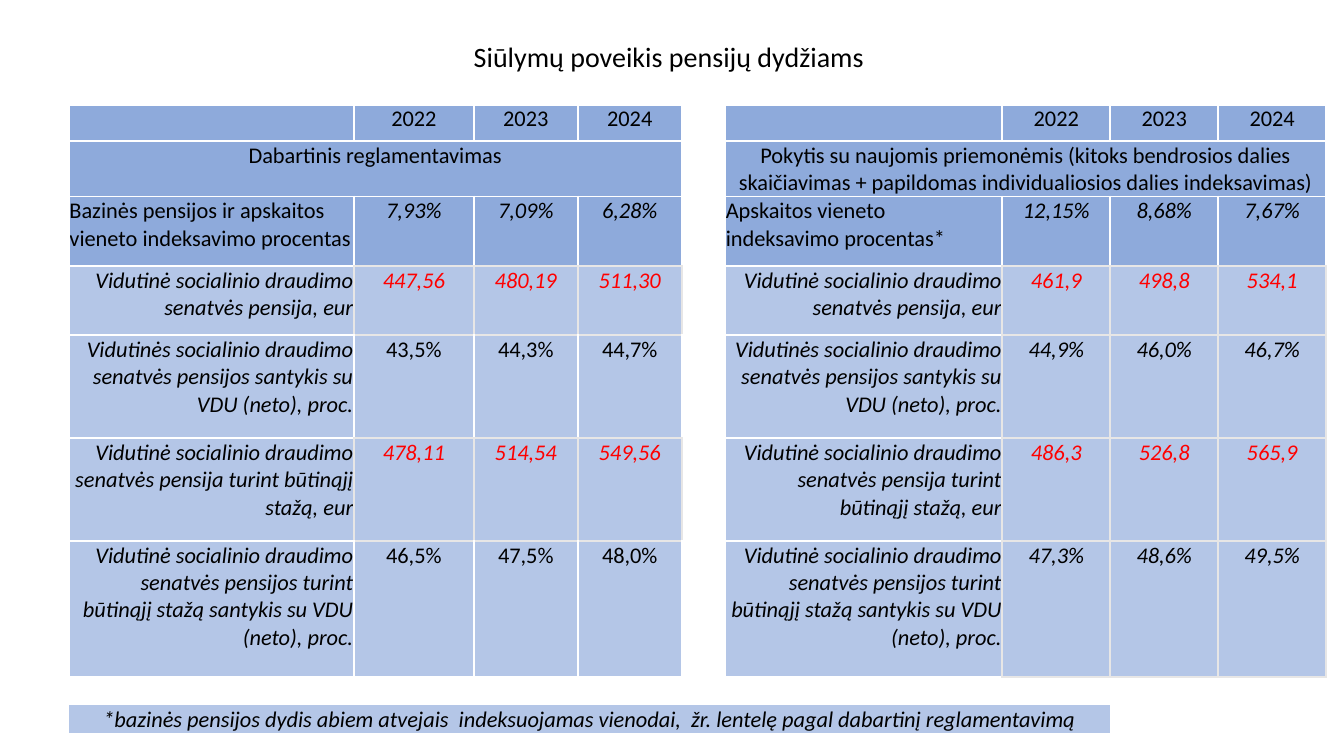
from lxml import etree
from pptx import Presentation
from pptx.dml.color import RGBColor
from pptx.enum.text import MSO_ANCHOR, PP_ALIGN
from pptx.oxml.ns import qn
from pptx.util import Cm, Pt

LEFT, CENTER, RIGHT = PP_ALIGN.LEFT, PP_ALIGN.CENTER, PP_ALIGN.RIGHT
MIDDLE = MSO_ANCHOR.MIDDLE
FONT = "Calibri"
BODY_SIZE = 16
PLAIN_TABLE_STYLE = "{2D5ABB26-0587-4C30-8999-92F81FD0307C}"
COLORS = {
    "text": "000000",
    "euro": "FF0000",
    "header": "8EAADB",
    "body": "B4C6E7",
    "white": "FFFFFF",
    "grey": "E7E6E6",
}

# Table layout in centimetres
COLUMN_WIDTHS = [7.19, 3.02, 2.62, 2.62, 1.09, 6.99, 2.72, 2.72, 2.72]
ROW_HEIGHTS = [0.91, 1.35, 1.75, 1.75, 2.59, 2.59, 3.43, 0.71, 0.69]
PANEL_STARTS = (0, 5)
GAP_COLUMN = 4
EURO_ROWS = (3, 5)
FIRST_BODY_ROW, LAST_BODY_ROW, FOOTNOTE_ROW = 3, 6, 8
SIDES = {"L": (0, -1), "R": (0, 1), "T": (-1, 0), "B": (1, 0)}

# Wording and values
YEARS = ["2022", "2023", "2024"]
MEASURES = [
    "Vidutinė socialinio draudimo senatvės pensija, eur",
    "Vidutinės socialinio draudimo senatvės pensijos santykis su VDU (neto), proc.",
    "Vidutinė socialinio draudimo senatvės pensija turint būtinąjį stažą, eur",
    "Vidutinė socialinio draudimo senatvės pensijos turint būtinąjį stažą santykis su VDU (neto), proc.",
]
PANELS = [
    {
        "heading": "Dabartinis reglamentavimas",
        "index_label": "Bazinės pensijos ir apskaitos vieneto indeksavimo procentas",
        "values": [
            ["7,93%", "7,09%", "6,28%"],
            ["447,56", "480,19", "511,30"],
            ["43,5%", "44,3%", "44,7%"],
            ["478,11", "514,54", "549,56"],
            ["46,5%", "47,5%", "48,0%"],
        ],
    },
    {
        "heading": "Pokytis su naujomis priemonėmis (kitoks bendrosios dalies "
                   "skaičiavimas + papildomas individualiosios dalies indeksavimas)",
        "index_label": "Apskaitos vieneto indeksavimo procentas*",
        "values": [
            ["12,15%", "8,68%", "7,67%"],
            ["461,9", "498,8", "534,1"],
            ["44,9%", "46,0%", "46,7%"],
            ["486,3", "526,8", "565,9"],
            ["47,3%", "48,6%", "49,5%"],
        ],
    },
]
FOOTNOTE = ("*bazinės pensijos dydis abiem atvejais  indeksuojamas vienodai,  "
            "žr. lentelę pagal dabartinį reglamentavimą")


def format_text(frame, size, align=CENTER, color="text", italic=False):
    frame.vertical_anchor = MIDDLE
    for para in frame.paragraphs:
        para.alignment = align
        for span in para.runs:
            span.font.name = FONT
            span.font.size = Pt(size)
            span.font.italic = italic
            span.font.color.rgb = RGBColor.from_string(COLORS[color])


def write_cell(cell, text, fill, align=CENTER, color="text", italic=False):
    cell.text_frame.text = text
    format_text(cell.text_frame, BODY_SIZE, align, color, italic)
    cell.fill.solid()
    cell.fill.fore_color.rgb = RGBColor.from_string(COLORS[fill])


def clear_cell(cell):
    """Remove the fill and insets, and keep the empty line at body size."""
    cell.fill.background()
    cell.margin_left = cell.margin_right = cell.margin_top = Cm(0.02)
    cell.margin_bottom = 0
    line_end = etree.SubElement(cell.text_frame.paragraphs[0]._p, qn("a:endParaRPr"))
    line_end.set("sz", str(BODY_SIZE * 100))


def fill_panel(table, start, panel):
    write_cell(table.cell(0, start), "", "header")
    for offset, year in enumerate(YEARS, 1):
        write_cell(table.cell(0, start + offset), year, "header")

    heading = table.cell(1, start)
    heading.merge(table.cell(1, start + len(YEARS)))
    write_cell(heading, panel["heading"], "header")

    labels = [panel["index_label"]] + MEASURES
    for row, (label, values) in enumerate(zip(labels, panel["values"]), 2):
        is_body = row >= FIRST_BODY_ROW
        is_euro = row in EURO_ROWS
        fill = "body" if is_body else "header"
        write_cell(table.cell(row, start), label, fill,
                   align=RIGHT if is_body else LEFT, italic=is_body)
        italic = not is_body or is_euro or start > GAP_COLUMN
        for offset, value in enumerate(values, 1):
            write_cell(table.cell(row, start + offset), value, fill,
                       color="euro" if is_euro else "text", italic=italic)


def has_grey_edges(row, column):
    """Euro values, and all values right of the gap, are outlined in grey."""
    is_value = column not in (*PANEL_STARTS, GAP_COLUMN) and 0 < column < len(COLUMN_WIDTHS)
    in_body = FIRST_BODY_ROW <= row <= LAST_BODY_ROW
    return is_value and in_body and (row in EURO_ROWS or column > GAP_COLUMN)


def draw_borders(cell, row, column):
    properties = cell._tc.get_or_add_tcPr()
    for position, (side, (down, across)) in enumerate(SIDES.items()):
        grey = has_grey_edges(row, column) or has_grey_edges(row + down, column + across)
        line = etree.Element(qn(f"a:ln{side}"), w=str(Pt(1.5)))
        fill = etree.SubElement(line, qn("a:solidFill"))
        etree.SubElement(fill, qn("a:srgbClr"), val=COLORS["grey" if grey else "white"])
        properties.insert(position, line)


def add_title(page, text):
    title = page.shapes.title
    title.left, title.top, title.width, title.height = Cm(1.17), Cm(0.86), Cm(31.37), Cm(1.12)
    title.text_frame.text = text
    format_text(title.text_frame, 20)


def add_pension_table(page):
    box = page.shapes.add_table(
        len(ROW_HEIGHTS), len(COLUMN_WIDTHS), Cm(1.73), Cm(2.64),
        Cm(sum(COLUMN_WIDTHS)), Cm(sum(ROW_HEIGHTS)))
    table = box.table
    table.first_row = table.horz_banding = False
    for style in box.element.iter(qn("a:tableStyleId")):
        style.text = PLAIN_TABLE_STYLE
    for column, width in zip(table.columns, COLUMN_WIDTHS):
        column.width = Cm(width)
    for row, height in zip(table.rows, ROW_HEIGHTS):
        row.height = Cm(height)
    for cell in table.iter_cells():
        clear_cell(cell)

    # Two panels side by side
    for start, panel in zip(PANEL_STARTS, PANELS):
        fill_panel(table, start, panel)
    for row in range(LAST_BODY_ROW + 1):
        for column in range(len(COLUMN_WIDTHS)):
            cell = table.cell(row, column)
            if column != GAP_COLUMN and not cell.is_spanned:
                draw_borders(cell, row, column)

    # Footnote row
    footnote = table.cell(FOOTNOTE_ROW, 0)
    footnote.merge(table.cell(FOOTNOTE_ROW, 6))
    write_cell(footnote, FOOTNOTE, "body", italic=True)


def main():
    deck = Presentation()
    deck.slide_width, deck.slide_height = Cm(33.87), Cm(19.05)
    page = deck.slides.add_slide(deck.slide_layouts.get_by_name("Title Only"))
    add_title(page, "Siūlymų poveikis pensijų dydžiams")
    add_pension_table(page)
    deck.save("out.pptx")


if __name__ == "__main__":
    main()
